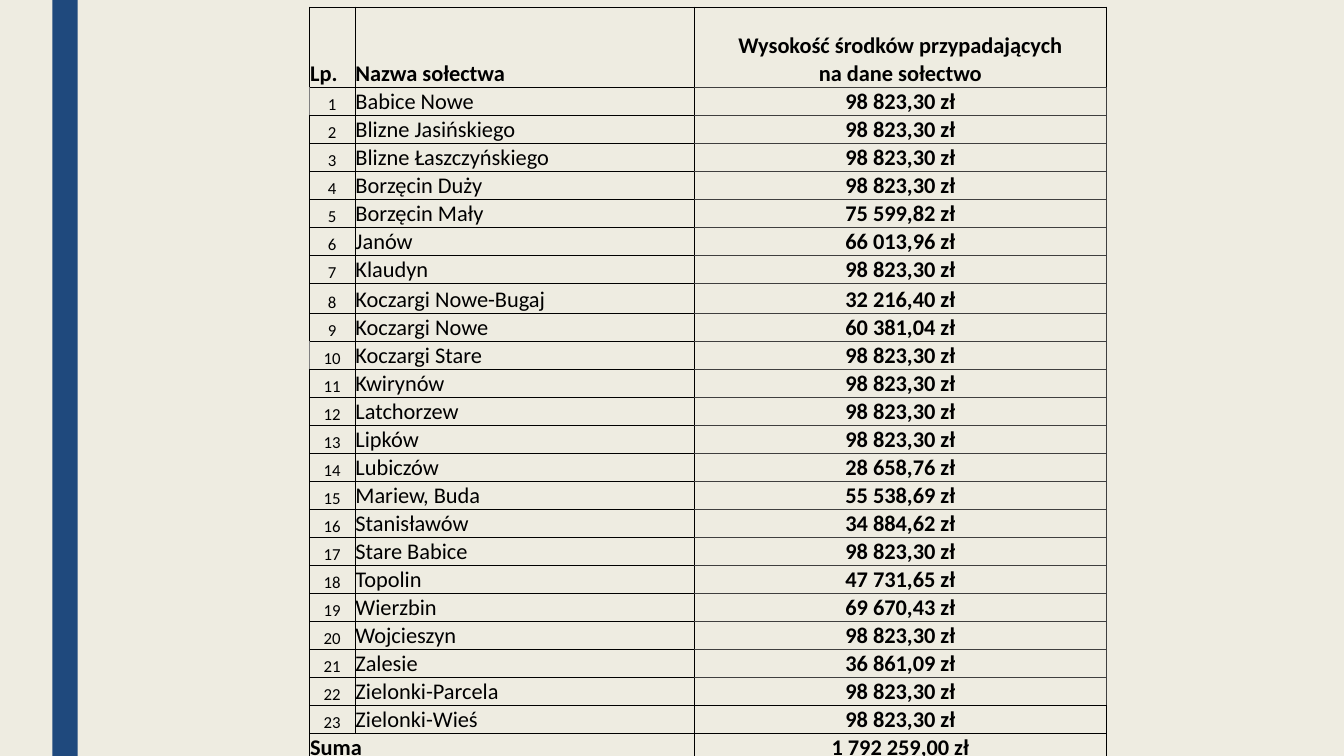
from lxml.etree import SubElement
from pptx import Presentation
from pptx.dml.color import RGBColor
from pptx.enum.shapes import MSO_SHAPE
from pptx.enum.text import MSO_ANCHOR, PP_ALIGN
from pptx.oxml.ns import qn
from pptx.util import Inches, Pt

CREAM = RGBColor(0xEE, 0xEC, 0xE1)
NAVY = RGBColor(0x1F, 0x49, 0x7D)
BLACK = RGBColor(0, 0, 0)
DARK_GRAY = RGBColor(0x3F, 0x3F, 0x3F)
GRAY = RGBColor(0x80, 0x80, 0x80)
FONT = "Calibri"
CELL_MARGIN = Pt(0.4)
PLAIN_TABLE_STYLE = "{2D5ABB26-0587-4C30-8999-92F81FD0307C}"

COLUMN_WIDTHS = (0.45, 3.37, 4.08)
HEADER_HEIGHT, ROW_HEIGHT, TALL_ROW_HEIGHT, TOTAL_HEIGHT = 0.52, 0.26, 0.3, 0.27
HEADER_ROWS = 2
TALL_NUMBER = 8
GRAY_EDGE_NUMBERS = (1, 10)

FULL_AMOUNT = "98 823,30 zł"
TOTAL = "1 792 259,00 zł"
VILLAGES = [
    ("Babice Nowe", FULL_AMOUNT),
    ("Blizne Jasińskiego", FULL_AMOUNT),
    ("Blizne Łaszczyńskiego", FULL_AMOUNT),
    ("Borzęcin Duży", FULL_AMOUNT),
    ("Borzęcin Mały", "75 599,82 zł"),
    ("Janów", "66 013,96 zł"),
    ("Klaudyn", FULL_AMOUNT),
    ("Koczargi Nowe-Bugaj", "32 216,40 zł"),
    ("Koczargi Nowe", "60 381,04 zł"),
    ("Koczargi Stare", FULL_AMOUNT),
    ("Kwirynów", FULL_AMOUNT),
    ("Latchorzew", FULL_AMOUNT),
    ("Lipków", FULL_AMOUNT),
    ("Lubiczów", "28 658,76 zł"),
    ("Mariew, Buda", "55 538,69 zł"),
    ("Stanisławów", "34 884,62 zł"),
    ("Stare Babice", FULL_AMOUNT),
    ("Topolin", "47 731,65 zł"),
    ("Wierzbin", "69 670,43 zł"),
    ("Wojcieszyn", FULL_AMOUNT),
    ("Zalesie", "36 861,09 zł"),
    ("Zielonki-Parcela", FULL_AMOUNT),
    ("Zielonki-Wieś", FULL_AMOUNT),
]


def add_side_bar(slide):
    bar = slide.shapes.add_shape(
        MSO_SHAPE.RECTANGLE, Inches(0.52), Inches(0), Inches(0.25), Inches(7.5))
    bar.shadow.inherit = False
    bar.fill.solid()
    bar.fill.fore_color.rgb = NAVY
    bar.line.fill.background()


def set_borders(cell, left=BLACK, right=BLACK, top=BLACK, bottom=BLACK):
    """Draw the four cell borders; None leaves a side without a line."""
    properties = cell._tc.get_or_add_tcPr()
    for side, color in zip("LRTB", (left, right, top, bottom)):
        line = SubElement(properties, qn(f"a:ln{side}"), w=str(Pt(0.5)))
        if color is None:
            SubElement(line, qn("a:noFill"))
        else:
            fill = SubElement(line, qn("a:solidFill"))
            SubElement(fill, qn("a:srgbClr"), val=str(color))


def format_cell(cell, **borders):
    set_borders(cell, **borders)
    cell.fill.background()
    cell.vertical_anchor = MSO_ANCHOR.BOTTOM
    cell.margin_left = cell.margin_right = cell.margin_top = CELL_MARGIN
    cell.margin_bottom = Inches(0)


def write_cell(cell, text, size=16, bold=True, align=PP_ALIGN.LEFT):
    paragraph = cell.text_frame.paragraphs[0]
    paragraph.alignment = align
    run = paragraph.add_run()
    run.text = text
    run.font.name = FONT
    run.font.size = Pt(size)
    run.font.bold = bold
    run.font.color.rgb = BLACK


def borders_for(row, column):
    number = row - HEADER_ROWS + 1
    if column == 0 and number in GRAY_EDGE_NUMBERS:
        return {"left": GRAY}
    if column == 2 and row == 0:
        return {"bottom": None}
    if column == 2 and row == 1:
        return {"top": None, "bottom": DARK_GRAY}
    if column == 2 and 1 <= number < len(VILLAGES):
        last_gray = number == len(VILLAGES) - 1
        return {"top": DARK_GRAY, "right": DARK_GRAY,
                "bottom": BLACK if last_gray else DARK_GRAY}
    return {}


def add_funds_table(slide):
    # Row sizes
    heights = [HEADER_HEIGHT] + [ROW_HEIGHT] * (len(VILLAGES) + 1) + [TOTAL_HEIGHT]
    heights[HEADER_ROWS + TALL_NUMBER - 1] = TALL_ROW_HEIGHT
    frame = slide.shapes.add_table(
        len(heights), len(COLUMN_WIDTHS), Inches(3.07), Inches(0.07),
        Inches(sum(COLUMN_WIDTHS)), Inches(sum(heights)))
    table = frame.table
    table.first_row = table.horz_banding = False
    table._tbl.tblPr.find(qn("a:tableStyleId")).text = PLAIN_TABLE_STYLE
    for column, width in zip(table.columns, COLUMN_WIDTHS):
        column.width = Inches(width)
    for row, height in zip(table.rows, heights):
        row.height = Inches(height)

    # Borders and margins
    for row in range(len(heights)):
        for column in range(len(COLUMN_WIDTHS)):
            format_cell(table.cell(row, column), **borders_for(row, column))

    # Header
    for column, title in enumerate(("Lp.", "Nazwa sołectwa")):
        table.cell(0, column).merge(table.cell(1, column))
        write_cell(table.cell(0, column), title)
    for row, title in enumerate(("Wysokość środków przypadających", "na dane sołectwo")):
        write_cell(table.cell(row, 2), title, align=PP_ALIGN.CENTER)

    # Villages
    for number, (village, amount) in enumerate(VILLAGES, 1):
        row = HEADER_ROWS + number - 1
        write_cell(table.cell(row, 0), str(number), 12, False, PP_ALIGN.CENTER)
        write_cell(table.cell(row, 1), village, bold=False)
        write_cell(table.cell(row, 2), amount, align=PP_ALIGN.CENTER)

    # Total
    last = len(heights) - 1
    table.cell(last, 0).merge(table.cell(last, 1))
    write_cell(table.cell(last, 0), "Suma")
    write_cell(table.cell(last, 2), TOTAL, align=PP_ALIGN.CENTER)


def main():
    presentation = Presentation()
    presentation.slide_width = Inches(13.33)
    presentation.slide_height = Inches(7.5)
    slide = presentation.slides.add_slide(presentation.slide_layouts[6])
    slide.background.fill.solid()
    slide.background.fill.fore_color.rgb = CREAM
    add_side_bar(slide)
    add_funds_table(slide)
    presentation.save("out.pptx")


if __name__ == "__main__":
    main()
